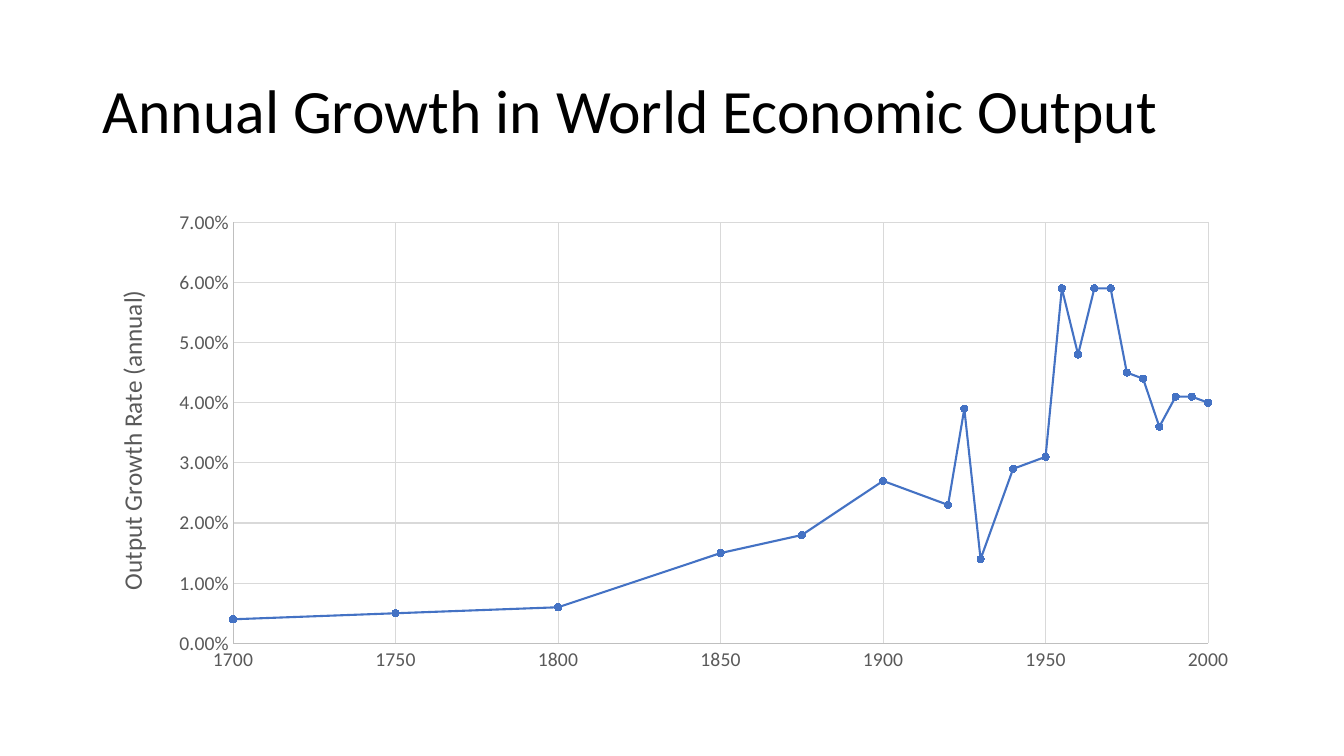
from pptx import Presentation
from pptx.chart.data import XyChartData
from pptx.dml.color import RGBColor
from pptx.enum.chart import XL_CHART_TYPE, XL_MARKER_STYLE, XL_TICK_MARK
from pptx.enum.text import MSO_ANCHOR, PP_ALIGN
from pptx.oxml import parse_xml
from pptx.oxml.ns import nsdecls, qn
from pptx.util import Inches, Pt

BLACK = RGBColor(0x00, 0x00, 0x00)
GREY = RGBColor(0x59, 0x59, 0x59)
AXIS = RGBColor(0xBF, 0xBF, 0xBF)
GRID = RGBColor(0xD9, 0xD9, 0xD9)
BLUE = RGBColor(0x44, 0x72, 0xC4)
FONT = "Calibri"

W, H = Inches(13.33), Inches(7.5)
MARGIN = Inches(0.92)
CONTENT_W = Inches(11.5)

YEARS = [1700, 1750, 1800, 1850, 1875, 1900, 1920, 1925, 1930, 1940, 1950,
         *range(1955, 2001, 5)]
GROWTH = [0.004, 0.005, 0.006, 0.015, 0.018, 0.027, 0.023, 0.039, 0.014, 0.029, 0.031,
          0.059, 0.048, 0.059, 0.059, 0.045, 0.044, 0.036, 0.041, 0.041, 0.04]


def style_font(font, size, color):
    font.name, font.size, font.bold = FONT, Pt(size), False
    font.color.rgb = color


def style_line(line, color, width):
    line.color.rgb = color
    line.width = Pt(width)


def set_layout(element, index, **shares):
    """Place a chart part by shares of the chart's size; index is its child order."""
    for old in element.findall(qn("c:layout")):
        element.remove(old)
    inner = '<c:layoutTarget val="inner"/>' if "w" in shares else ""
    modes = "".join(f'<c:{k}Mode val="edge"/>' for k in "xy")
    sizes = "".join(f'<c:{k} val="{v}"/>' for k, v in shares.items())
    element.insert(index, parse_xml(
        f'<c:layout {nsdecls("c")}><c:manualLayout>{inner}{modes}{sizes}'
        '</c:manualLayout></c:layout>'))


def add_title(s, text, x, y, w, h):
    title = s.shapes.title
    title.left, title.top, title.width, title.height = x, y, w, h
    tf = title.text_frame
    tf.text = text
    tf.vertical_anchor = MSO_ANCHOR.MIDDLE
    p = tf.paragraphs[0]
    p.alignment = PP_ALIGN.LEFT
    p.line_spacing = 0.9
    style_font(p.runs[0].font, 44, BLACK)


def style_axis(axis, low, high, step, number_format):
    axis.minimum_scale, axis.maximum_scale, axis.major_unit = low, high, step
    axis.major_tick_mark = axis.minor_tick_mark = XL_TICK_MARK.NONE
    axis.has_major_gridlines = True
    style_line(axis.major_gridlines.format.line, GRID, 0.75)
    style_line(axis.format.line, AXIS, 0.75)
    style_font(axis.tick_labels.font, 14, GREY)
    axis.tick_labels.number_format = number_format
    axis.tick_labels.number_format_is_linked = False


def add_growth_chart(s, x, y, w, h):
    data = XyChartData()
    points = data.add_series("Series 1")
    for year, growth in zip(YEARS, GROWTH):
        points.add_data_point(year, growth)
    chart = s.shapes.add_chart(XL_CHART_TYPE.XY_SCATTER_LINES, x, y, w, h, data).chart
    chart.has_legend = chart.has_title = False
    style_font(chart.font, 10, BLACK)

    style_axis(chart.category_axis, 1700, 2000, 50, "General")
    style_axis(chart.value_axis, 0, 0.07, 0.01, "0.00%")
    axis_title = chart.value_axis.axis_title
    axis_title.text_frame.text = "Output Growth Rate (annual)"
    style_font(axis_title.text_frame.paragraphs[0].runs[0].font, 18, GREY)

    plot = chart.plots[0]
    plot.vary_by_categories = False
    series = plot.series[0]
    series.smooth = False
    style_line(series.format.line, BLUE, 1.5)
    marker = series.marker
    marker.style, marker.size = XL_MARKER_STYLE.CIRCLE, 5
    marker.format.fill.solid()
    marker.format.fill.fore_color.rgb = BLUE
    style_line(marker.format.line, BLUE, 0.75)

    plot_area = chart.element.find(".//" + qn("c:plotArea"))
    set_layout(plot_area, 0, x=0.121, y=0.043, w=0.841, h=0.878)
    set_layout(plot_area.find(".//" + qn("c:title")), 1, x=0.015, y=0.176)


def main():
    prs = Presentation()
    prs.slide_width, prs.slide_height = W, H
    s = prs.slides.add_slide(prs.slide_layouts[5])
    add_title(s, "Annual Growth in World Economic Output",
              MARGIN, Inches(0.4), CONTENT_W, Inches(1.45))
    add_growth_chart(s, MARGIN, Inches(2), CONTENT_W, Inches(4.76))
    prs.save("out.pptx")


if __name__ == "__main__":
    main()
